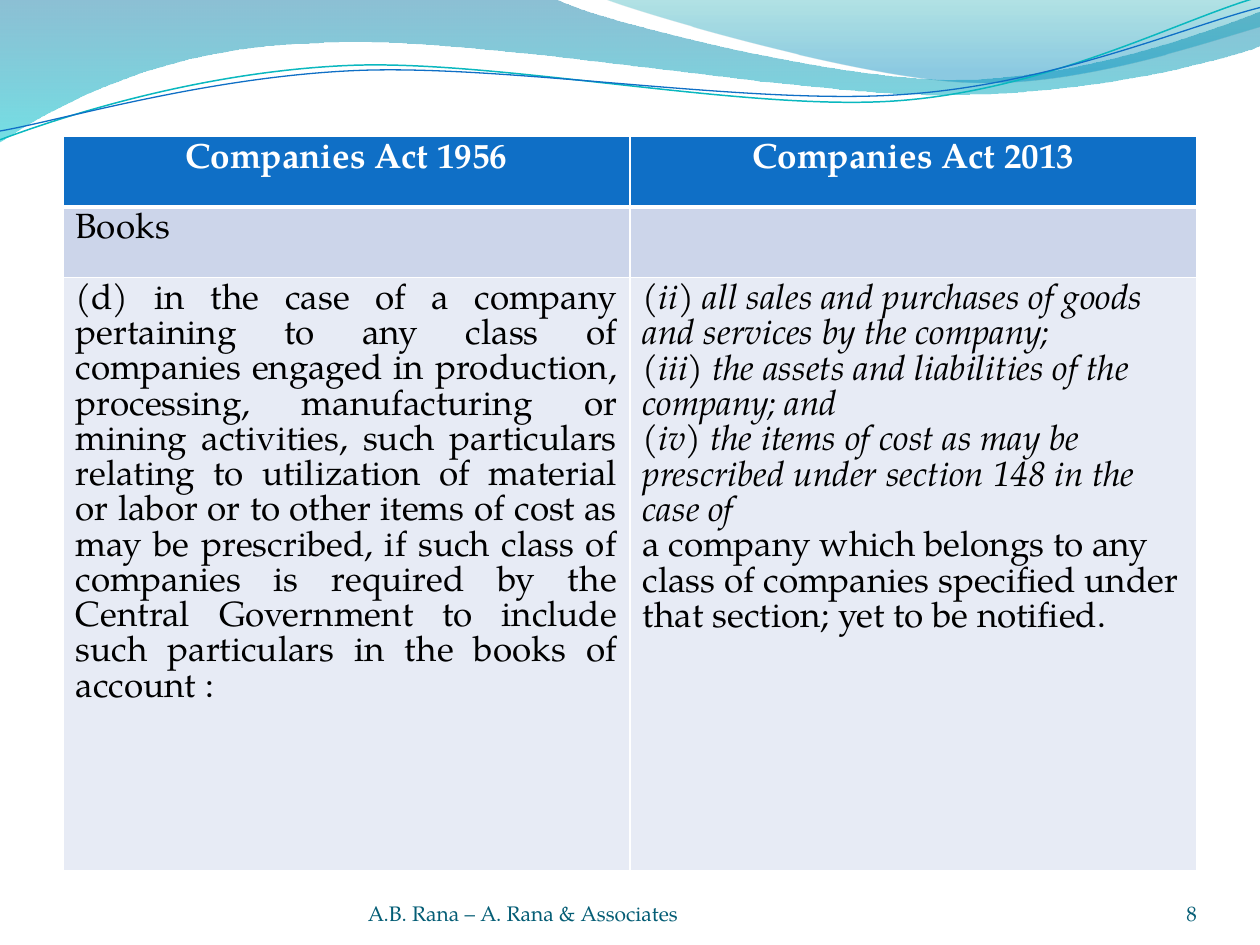
from dataclasses import dataclass

import pptx
import pptx.dml.color
import pptx.enum.text
import pptx.oxml
import pptx.oxml.ns
import pptx.util
from pptx.util import Inches, Pt

ALIGN = pptx.enum.text.PP_ALIGN


@dataclass(frozen=True)
class Theme:
    font: str = "TeX Gyre Pagella"
    body_size: int = 20
    footer_size: int = 12
    blue: str = "0F6FC6"
    teal: str = "0AB8BF"
    white: str = "FFFFFF"
    black: str = "000000"
    footer: str = "045D75"
    band_dark: str = "CCD5EA"
    band_light: str = "E7EBF5"
    # Gradient stops: position, colour, opacity in percent
    wide_wave: tuple = ((0, "0074A1", 45), (1, "00C6CF", 55))
    right_wave: tuple = ((0, "00A1A9", 30), (0.8, "008BBF", 45))


THEME = Theme()

# Each wave is a start point, then points (2 numbers) or Bezier curves (6 numbers)
WIDE_WAVE = [
    (0, 0), (4.4, -0.01),
    (4.76, 0.17, 6.64, 0.63, 7.58, 0.63), (8.53, 0.63, 9.58, 0.26, 10, 0.09),
    (10.01, 0.36),
    (9.83, 0.44, 8.7, 0.76, 7.46, 0.75), (6.22, 0.75, 3.82, 0.28, 2.57, 0.34),
    (1.29, 0.36, 0.46, 0.83, -0.01, 1.13),
]
RIGHT_WAVE = [
    (4.79, -0.01),
    (5.09, 0.11, 6.82, 0.62, 7.69, 0.65), (8.56, 0.69, 9.61, 0.32, 10, 0.21),
    (10, 0),
]
TEAL_LINE = [
    (0, 1.11),
    (0.48, 0.93, 1.58, 0.57, 2.77, 0.52), (3.95, 0.47, 5.93, 0.89, 7.13, 0.8),
    (8.33, 0.71, 9.38, 0.15, 9.98, -0.02),
]
BLUE_LINE = [
    (0, 1.04),
    (0.47, 0.96, 1.64, 0.61, 2.83, 0.56), (4.03, 0.51, 5.97, 0.84, 7.17, 0.75),
    (8.36, 0.67, 9.41, 0.21, 10, 0.06),
]

# A paragraph is a list of (text, italic) runs
OLD_ACT = [[(
    "(d) in the case of a company pertaining to any class of companies engaged in "
    "production, processing, manufacturing or mining activities, such particulars "
    "relating to utilization of material or labor or to other items of cost as may be "
    "prescribed, if such class of companies is required by the Central Government to "
    "include such particulars in the books of account :", False)]]
NEW_ACT = [
    [("(", False), ("ii) all sales and purchases of goods and services by the company;", True)],
    [("(", False), ("iii) the assets and liabilities of the company; and", True)],
    [("(", False), ("iv) the items of cost as may be prescribed under section 148 "
                    "in the case of", True)],
    [("a company which belongs to any class of companies specified under that section; "
      "yet to be notified.", False)],
]


def rgb(colour):
    return pptx.dml.color.RGBColor.from_string(colour)


def add_outline(slide, left, top, segments, closed):
    """Build through all control points, then join each curve's three into a Bezier."""
    points = [(left + Inches(segment[i]), top + Inches(segment[i + 1]))
              for segment in segments for i in range(0, len(segment), 2)]
    builder = slide.shapes.build_freeform(*points[0])
    builder.add_line_segments(points[1:], close=closed)
    shape = builder.convert_to_shape()
    shape.shadow.inherit = False
    line_steps = iter(list(shape.element.spPr.iter(pptx.oxml.ns.qn("a:lnTo"))))
    for segment in segments[1:]:
        step = next(line_steps)
        if len(segment) == 6:
            curve = pptx.oxml.parse_xml(f'<a:cubicBezTo {pptx.oxml.ns.nsdecls("a")}/>')
            step.addprevious(curve)
            for control in (step, next(line_steps), next(line_steps)):
                control.getparent().remove(control)
                curve.append(control[0])
    return shape


def add_wave(slide, left, top, segments, stops):
    shape = add_outline(slide, left, top, segments, closed=True)
    shape.line.fill.background()
    shape.fill.gradient()
    shape.fill.gradient_angle = 270
    for stop, (position, colour, _) in zip(shape.fill.gradient_stops, stops):
        stop.position = position
        stop.color.rgb = rgb(colour)
    colour_tag = pptx.oxml.ns.qn("a:srgbClr")
    for element, (_, _, opacity) in zip(list(shape.element.spPr.iter(colour_tag)), stops):
        element.append(pptx.oxml.parse_xml(
            f'<a:alpha {pptx.oxml.ns.nsdecls("a")} val="{opacity * 1000}"/>'))


def add_wave_line(slide, left, top, segments, colour, width):
    shape = add_outline(slide, left, top, segments, closed=False)
    shape.fill.background()
    shape.line.color.rgb = rgb(colour)
    shape.line.width = Pt(width)


def add_header_waves(slide, left, top):
    add_wave(slide, left, top, WIDE_WAVE, THEME.wide_wave)
    add_wave(slide, left, top, RIGHT_WAVE, THEME.right_wave)
    add_wave_line(slide, left, top, TEAL_LINE, THEME.teal, 0.85)
    add_wave_line(slide, left, top, BLUE_LINE, THEME.blue, 0.75)


def write(text_frame, paragraphs, size, colour, alignment, bold=False):
    for index, runs in enumerate(paragraphs):
        paragraph = text_frame.paragraphs[0] if index == 0 else text_frame.add_paragraph()
        paragraph.alignment = alignment
        for text, italic in runs:
            run = paragraph.add_run()
            run.text = text
            run.font.name = THEME.font
            run.font.size = Pt(size)
            run.font.color.rgb = rgb(colour)
            run.font.bold = bold
            run.font.italic = italic


def set_borders(cell, widths):
    """Draw white borders; widths maps a side (L, R, T, B) to points."""
    properties = cell._tc.get_or_add_tcPr()
    for index, (side, width) in enumerate(widths.items()):
        properties.insert(index, pptx.oxml.parse_xml(
            f'<a:ln{side} {pptx.oxml.ns.nsdecls("a")} w="{Pt(width)}"><a:solidFill>'
            f'<a:srgbClr val="{THEME.white}"/></a:solidFill></a:ln{side}>'))


def add_comparison_table(slide, left, top, width, height):
    header = [[[("Companies Act 1956", False)]], [[("Companies Act 2013", False)]]]
    rows = [
        (header, THEME.blue, (ALIGN.CENTER, ALIGN.CENTER)),
        ([[[("Books", False)]], []], THEME.band_dark, (ALIGN.LEFT, ALIGN.LEFT)),
        ([OLD_ACT, NEW_ACT], THEME.band_light, (ALIGN.JUSTIFY, ALIGN.LEFT)),
    ]
    table = slide.shapes.add_table(len(rows), 2, left, top, width, height).table
    table.horz_banding = False
    short_row = Inches(0.56)
    for row, row_height in zip(table.rows, (short_row, short_row, height - 2 * short_row)):
        row.height = row_height
    for row_index, (contents, fill, alignments) in enumerate(rows):
        is_header = row_index == 0
        for column_index, paragraphs in enumerate(contents):
            cell = table.cell(row_index, column_index)
            cell.fill.solid()
            cell.fill.fore_color.rgb = rgb(fill)
            set_borders(cell, {"L": 1, "R": 1, "T": 3 if row_index == 1 else 1,
                               "B": 3 if is_header else 1})
            write(cell.text_frame, paragraphs, THEME.body_size,
                  THEME.white if is_header else THEME.black,
                  alignments[column_index], bold=is_header)


def add_footer(slide, left, top, width, height):
    number_width = Inches(0.83)
    parts = [
        ("A.B. Rana – A. Rana & Associates", left + Inches(2.42), Inches(3.67), ALIGN.LEFT),
        ("8", left + width - number_width, number_width, ALIGN.RIGHT),
    ]
    for text, part_left, part_width, alignment in parts:
        text_frame = slide.shapes.add_textbox(part_left, top, part_width, height).text_frame
        text_frame.word_wrap = True
        text_frame.vertical_anchor = pptx.enum.text.MSO_ANCHOR.BOTTOM
        text_frame.margin_left = text_frame.margin_right = 0
        text_frame.margin_top = text_frame.margin_bottom = 0
        write(text_frame, [[(text, False)]], THEME.footer_size, THEME.footer, alignment)


def main():
    presentation = pptx.Presentation()
    presentation.slide_width, presentation.slide_height = Inches(10), Inches(7.5)
    slide = presentation.slides.add_slide(presentation.slide_layouts[6])
    add_header_waves(slide, 0, 0)
    add_comparison_table(slide, Inches(0.5), Inches(13 / 12), Inches(9), Inches(5.83))
    add_footer(slide, Inches(0.5), Inches(6.95), Inches(9), Inches(0.4))
    presentation.save("out.pptx")


if __name__ == "__main__":
    main()
